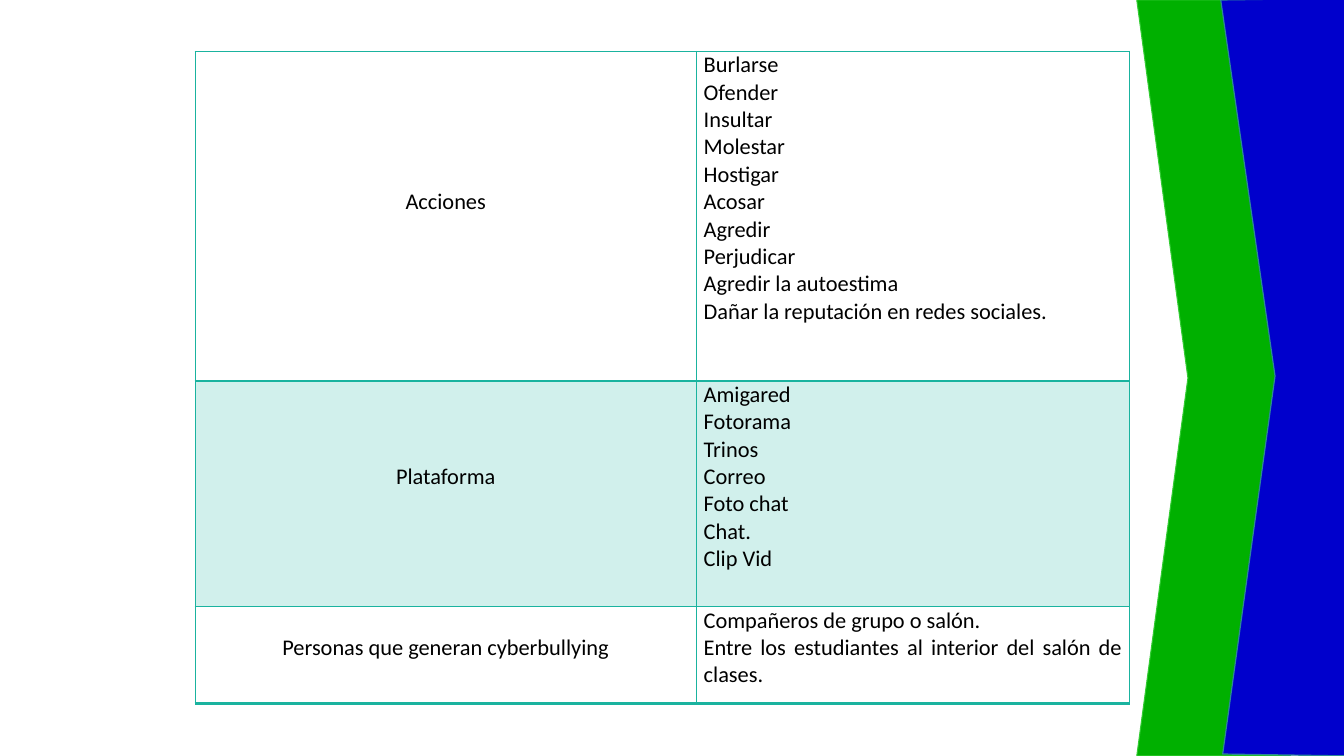
import lxml.etree
import pptx
import pptx.dml.color
import pptx.enum.shapes
import pptx.enum.text
import pptx.oxml.ns
import pptx.util

Pt = pptx.util.Pt
Align = pptx.enum.text.PP_ALIGN
qn = pptx.oxml.ns.qn

COLUMN_WIDTHS = [357.8, 309.6]
LINE_HEIGHT = 19.55
# Each row: height, fill, bottom border, lines above the label, label, entries
ROWS = [
    (235.4, "FFFFFF", 2, 5, "Acciones",
     ["Burlarse", "Ofender", "Insultar", "Molestar", "Hostigar", "Acosar",
      "Agredir", "Perjudicar", "Agredir la autoestima",
      "Dañar la reputación en redes sociales."]),
    (161.3, "D1F0EC", 1, 3, "Plataforma",
     ["Amigared", "Fotorama", "Trinos", "Correo", "Foto chat", "Chat.", "Clip Vid"]),
    (69.1, "FFFFFF", 2, 1, "Personas que generan cyberbullying",
     ["Compañeros de grupo o salón.",
      "Entre los estudiantes al interior del salón de clases."]),
]


def color(value):
    return pptx.dml.color.RGBColor.from_string(value)


class SlideBuilder:
    font = "Calibri"
    size = 16
    text = "000000"
    border = "1AB39F"

    def __init__(self, page):
        self.page = page

    def paint(self, shape, fill, line, width):
        shape.shadow.inherit = False
        shape.fill.solid()
        shape.fill.fore_color.rgb = color(fill)
        shape.line.color.rgb = color(line)
        shape.line.width = Pt(width)

    def chevron(self, left, top, width, height, notch, fill, line, line_width):
        shape = self.page.shapes.add_shape(
            pptx.enum.shapes.MSO_SHAPE.CHEVRON,
            Pt(left), Pt(top), Pt(width), Pt(height))
        shape.adjustments[0] = notch
        self.paint(shape, fill, line, line_width)

    def outline(self, points, fill, line, line_width):
        corners = [(Pt(x), Pt(y)) for x, y in points]
        builder = self.page.shapes.build_freeform(*corners[0])
        builder.add_line_segments(corners[1:], close=True)
        self.paint(builder.convert_to_shape(), fill, line, line_width)

    def borders(self, cell, top, bottom):
        properties = cell._tc.get_or_add_tcPr()
        for side, width in (("lnL", 1), ("lnR", 1), ("lnT", top), ("lnB", bottom)):
            line = lxml.etree.SubElement(properties, qn("a:" + side), w=str(Pt(width)))
            fill = lxml.etree.SubElement(line, qn("a:solidFill"))
            lxml.etree.SubElement(fill, qn("a:srgbClr"), val=self.border)

    def cell(self, cell, lines, align, fill, top, bottom, lines_above=0):
        self.borders(cell, top, bottom)
        cell.fill.solid()
        cell.fill.fore_color.rgb = color(fill)
        cell.margin_left = cell.margin_right = Pt(5.4)
        cell.margin_top = Pt(lines_above * LINE_HEIGHT)
        cell.margin_bottom = 0
        cell.text_frame.text = "\n".join(lines)
        for para in cell.text_frame.paragraphs:
            para.alignment = align
            for span in para.runs:
                span.font.name = self.font
                span.font.size = Pt(self.size)
                span.font.color.rgb = color(self.text)

    def table(self, left, top, widths, rows):
        height = sum(row[0] for row in rows)
        table = self.page.shapes.add_table(
            len(rows), len(widths), Pt(left), Pt(top), Pt(sum(widths)), Pt(height)).table
        table.first_row = table.horz_banding = False
        for column, width in zip(table.columns, widths):
            column.width = Pt(width)
        above = 1
        for index, (height, fill, below, lines_above, label, entries) in enumerate(rows):
            table.rows[index].height = Pt(height)
            self.cell(table.cell(index, 0), [label], Align.CENTER,
                      fill, above, below, lines_above)
            self.cell(table.cell(index, 1), entries, Align.JUSTIFY, fill, above, below)
            above = below


def main():
    deck = pptx.Presentation()
    deck.slide_width, deck.slide_height = Pt(960), Pt(540)
    builder = SlideBuilder(deck.slides.add_slide(deck.slide_layouts[6]))

    # Side bands
    builder.chevron(812, 0, 146.2, 540, 0.25, "00B000", "33CC33", 0.75)
    builder.outline([(872, 0), (969.8, -1.4), (964.8, 270), (967.7, 540),
                     (873.4, 538.6), (910.8, 268.6)], "0000CC", "2E8799", 0.85)

    # Cyberbullying table
    builder.table(139.5, 36.7, COLUMN_WIDTHS, ROWS)

    deck.save("out.pptx")


if __name__ == "__main__":
    main()
